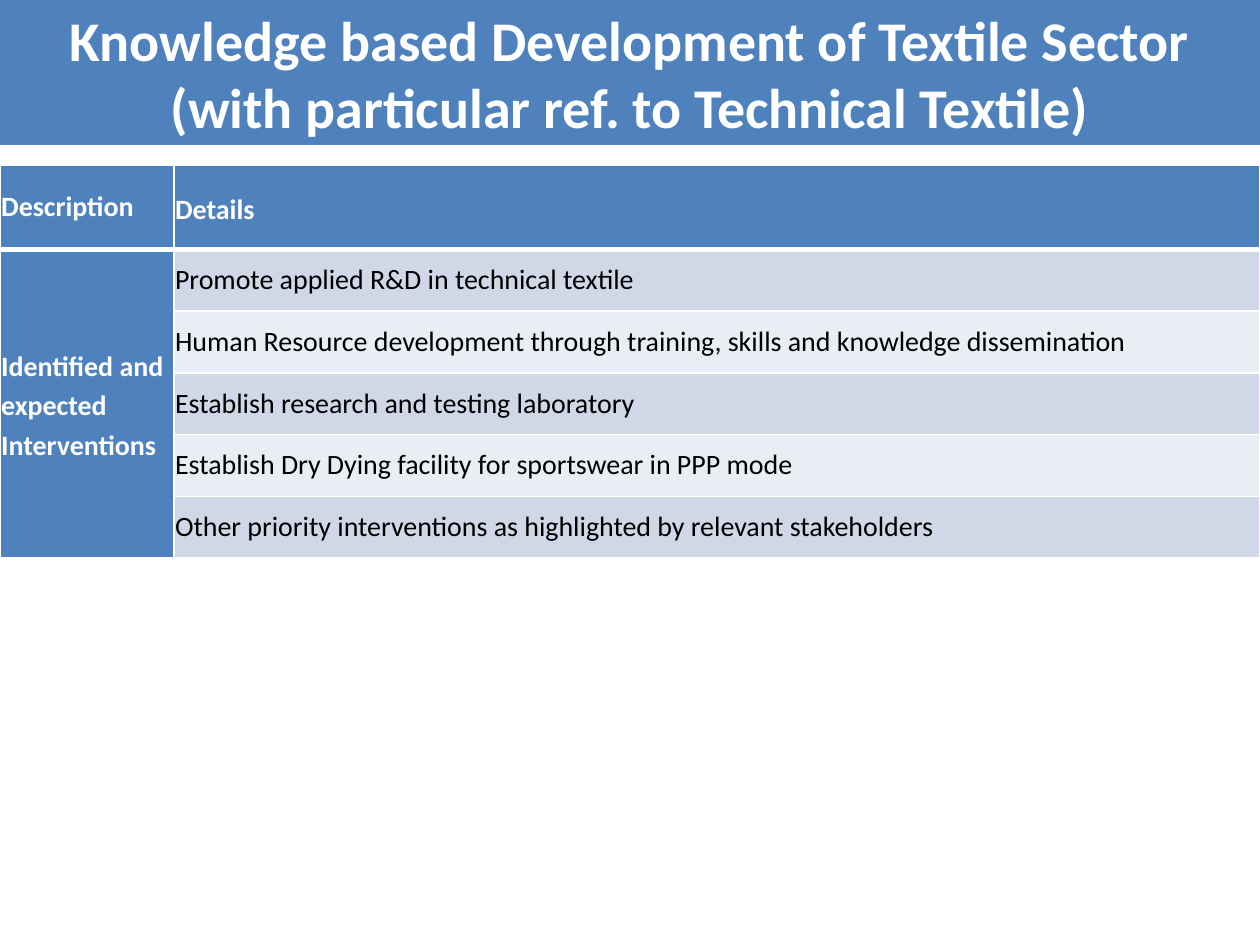
"""Build the textile sector slide: a title band above a table of interventions."""
from dataclasses import dataclass

from lxml.etree import SubElement
from pptx import Presentation
from pptx.dml.color import RGBColor as Color
from pptx.enum.text import MSO_ANCHOR as Anchor, MSO_AUTO_SIZE as AutoSize, PP_ALIGN as Align
from pptx.oxml import parse_xml
from pptx.oxml.ns import nsdecls, qn
from pptx.util import Inches, Pt


@dataclass(frozen=True)
class Theme:
    font: str = "Calibri"
    title_size: int = 32
    body_size: int = 16
    blue: str = "4F81BD"
    white: str = "FFFFFF"
    black: str = "000000"
    bands: tuple = ("D0D8E8", "E9EDF4")
    thin: int = 1
    thick: int = 3


theme = Theme()


def style_text(para, size, color, bold):
    para.font.name = theme.font
    para.font.size = Pt(size)
    para.font.bold = bold
    para.font.color.rgb = Color.from_string(color)


def style_borders(cell, widths):
    properties = cell._tc.get_or_add_tcPr()
    for index, (side, width) in enumerate(widths.items()):
        line = parse_xml(f'<a:ln{side} {nsdecls("a")} w="{Pt(width)}"/>')
        fill = SubElement(line, qn("a:solidFill"))
        SubElement(fill, qn("a:srgbClr"), val=theme.white)
        properties.insert(index, line)


deck = Presentation()
deck.slide_width, deck.slide_height = Inches(10), Inches(7.5)
width = deck.slide_width
page = deck.slides.add_slide(deck.slide_layouts[5])

title = page.shapes.title
title.left, title.top, title.width, title.height = 0, 0, width, Inches(1.15)
title.fill.solid()
title.fill.fore_color.rgb = Color.from_string(theme.blue)
frame = title.text_frame
frame.text = "Knowledge based Development of Textile Sector (with particular ref. to Technical Textile)"
frame.word_wrap = True
frame.auto_size = AutoSize.NONE
frame.vertical_anchor = Anchor.MIDDLE
frame.paragraphs[0].alignment = Align.CENTER
style_text(frame.paragraphs[0], theme.title_size, theme.white, True)

rows = [
    ("Description", "Details"),
    ("Identified and expected Interventions", "Promote applied R&D in technical textile"),
    ("", "Human Resource development through training, skills and knowledge dissemination"),
    ("", "Establish research and testing laboratory"),
    ("", "Establish Dry Dying facility for sportswear in PPP mode"),
    ("", "Other priority interventions as highlighted by relevant stakeholders"),
]
column_widths = [Inches(1.38), Inches(8.62)]
row_heights = [Inches(0.67)] + [Inches(0.49)] * (len(rows) - 1)
table = page.shapes.add_table(
    len(rows), len(column_widths), 0, Inches(1.31), width, sum(row_heights)
).table
table.first_col = True
for column, column_width in zip(table.columns, column_widths):
    column.width = column_width
for row, row_height in zip(table.rows, row_heights):
    row.height = row_height
table.cell(1, 0).merge(table.cell(len(rows) - 1, 0))

loose_cells = {(0, 1), (1, 0)}
for r, texts in enumerate(rows):
    for c, text in enumerate(texts):
        cell = table.cell(r, c)
        heading = r == 0 or c == 0
        cell.margin_left = cell.margin_right = Inches(0.01)
        cell.margin_top = cell.margin_bottom = 0
        cell.vertical_anchor = Anchor.MIDDLE
        cell.fill.solid()
        cell.fill.fore_color.rgb = Color.from_string(
            theme.blue if heading else theme.bands[(r - 1) % 2]
        )
        style_borders(cell, {
            "L": theme.thin,
            "R": theme.thin,
            "T": theme.thick if r == 1 else theme.thin,
            "B": theme.thick if r == 0 else theme.thin,
        })
        if not text:
            continue
        cell.text = text
        para = cell.text_frame.paragraphs[0]
        style_text(para, theme.body_size, theme.white if heading else theme.black, heading)
        if (r, c) in loose_cells:
            para.line_spacing = 1.15
        else:
            para.alignment = Align.JUSTIFY
            spacing = parse_xml(f'<a:spcBef {nsdecls("a")}><a:spcPct val="20000"/></a:spcBef>')
            para._p.get_or_add_pPr().insert(0, spacing)

deck.save("out.pptx")
